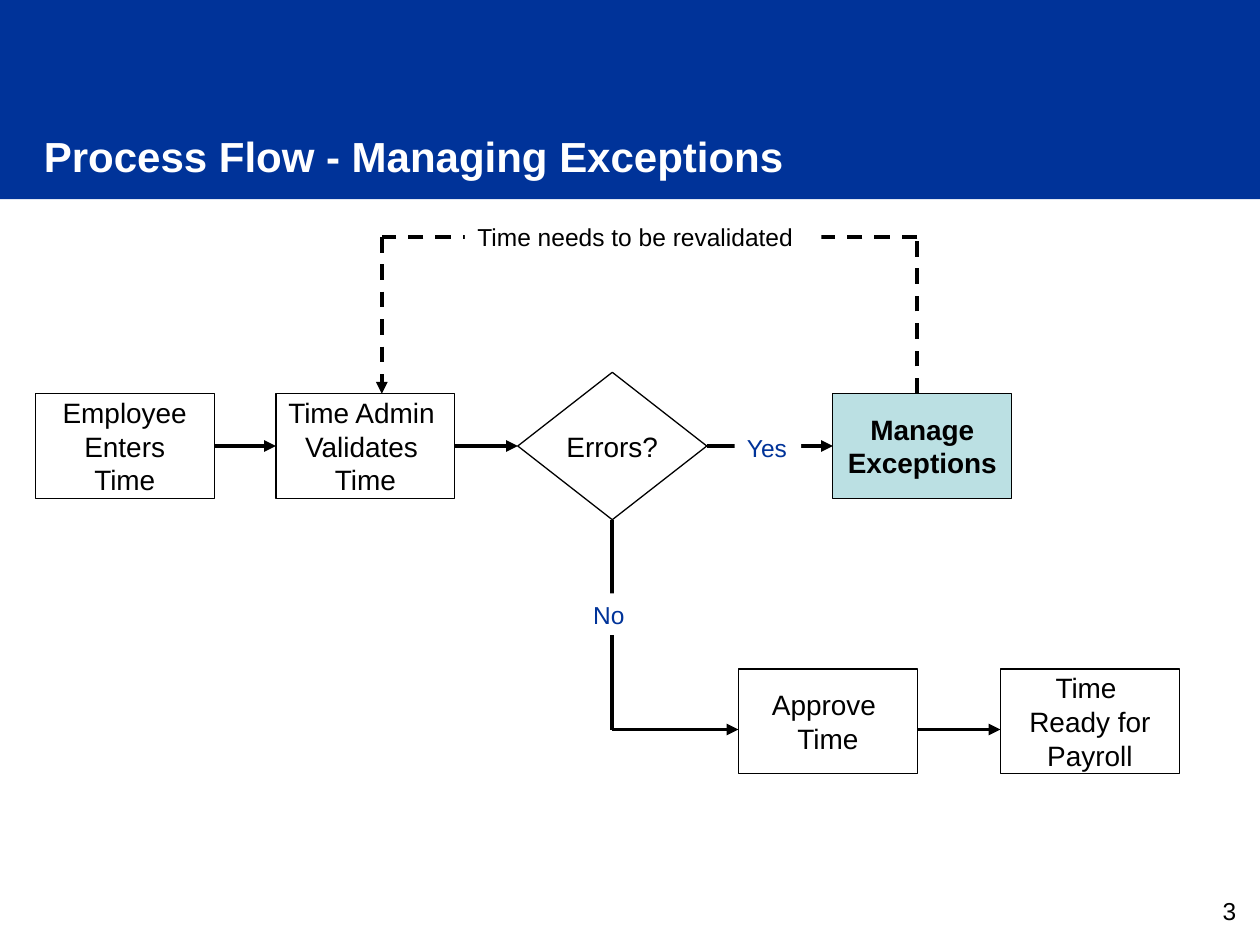
from lxml import etree
from pptx import Presentation
from pptx import util as u
from pptx.dml.color import RGBColor
from pptx.enum import dml, shapes, text
from pptx.oxml.ns import qn

COLORS = {"blue": "003399", "white": "FFFFFF", "black": "000000", "teal": "BBE0E3"}
FONT = "Arial"
SLIDE_W, SLIDE_H = 10, 7.5
BAND_H = 1.58
STEP_W, STEP_H = 1.42, 0.83
DIAMOND_W, DIAMOND_H = 1.5, 1.17
LABEL_H = 0.33

# Left edges of the columns, and heights of the flow rows
COL = {"enter": 0.28, "validate": 2.19, "decide": 4.11,
       "approve": 5.86, "manage": 6.61, "ready": 7.94}
MAIN_Y, APPROVE_Y, APPROVE_MID, LOOP_Y = 3.54, 5.79, 5.725, 1.88
DECIDE_X = COL["decide"] + DIAMOND_W / 2
VALIDATE_X, MANAGE_X = 3.03, 7.28

TITLE = "Process Flow - Managing Exceptions"
PAGE_NUMBER = "3"

# column, row centre, lines, highlighted
STEPS = [
    ("enter", MAIN_Y, ["Employee", "Enters", "Time"], False),
    ("validate", MAIN_Y, ["Time Admin ", "Validates ", "Time"], False),
    ("manage", MAIN_Y, ["Manage", "Exceptions"], True),
    ("approve", APPROVE_MID, ["Approve ", "Time"], False),
    ("ready", APPROVE_MID, ["Time ", "Ready for", "Payroll"], False),
]

MAIN_TOP = MAIN_Y - STEP_H / 2
# points along the path, dashed; the last segment may carry an arrowhead
FLOWS = [
    ([(COL["enter"] + STEP_W, MAIN_Y), (COL["validate"], MAIN_Y)], False),
    ([(COL["validate"] + STEP_W, MAIN_Y), (COL["decide"], MAIN_Y)], False),
    ([(COL["decide"] + DIAMOND_W, MAIN_Y), (COL["manage"], MAIN_Y)], False),
    ([(DECIDE_X, MAIN_Y + DIAMOND_H / 2), (DECIDE_X, APPROVE_Y),
      (COL["approve"], APPROVE_Y)], False),
    ([(COL["approve"] + STEP_W, APPROVE_Y), (COL["ready"], APPROVE_Y)], False),
    ([(MANAGE_X, MAIN_TOP), (MANAGE_X, LOOP_Y), (VALIDATE_X, LOOP_Y),
      (VALIDATE_X, MAIN_TOP)], True),
]

# wording, left, row centre, width, colour, wraps
LABELS = [
    ("Yes", 5.83, 3.555, 0.53, "blue", False),
    ("Time needs to be revalidated", 3.69, LOOP_Y, 2.83, "black", True),
    ("No", DECIDE_X - 0.25, 4.875, 0.5, "blue", True),
]


def rgb(name):
    return RGBColor.from_string(COLORS[name])


def write(shape, lines, size, color="black", bold=False, wrap=True,
          align=text.PP_ALIGN.LEFT, anchor=text.MSO_ANCHOR.TOP):
    frame = shape.text_frame
    frame.word_wrap = wrap
    frame.vertical_anchor = anchor
    for i, line in enumerate(lines):
        paragraph = frame.add_paragraph() if i else frame.paragraphs[0]
        paragraph.alignment = align
        run = paragraph.add_run()
        run.text = line
        run.font.name, run.font.size, run.font.bold = FONT, u.Pt(size), bold
        run.font.color.rgb = rgb(color)


def add_box(slide, kind, left, top, width, height, fill=None, outline=False):
    box = slide.shapes.add_shape(kind, *map(u.Inches, (left, top, width, height)))
    box.shadow.inherit = False
    if fill:
        box.fill.solid()
        box.fill.fore_color.rgb = rgb(fill)
    else:
        box.fill.background()
    if outline:
        box.line.color.rgb = rgb("black")
        box.line.width = u.Pt(0.75)
    else:
        box.line.fill.background()
    return box


def add_textbox(slide, *place):
    return slide.shapes.add_textbox(*map(u.Inches, place))


def add_flow(slide, points, dashed):
    """Join the points with straight lines, ending in an arrowhead."""
    for i, (start, end) in enumerate(zip(points, points[1:]), 1):
        line = slide.shapes.add_connector(
            shapes.MSO_CONNECTOR.STRAIGHT, *map(u.Inches, (*start, *end)))
        line.line.color.rgb = rgb("black")
        line.line.width = u.Pt(2.25)
        if dashed:
            line.line.dash_style = dml.MSO_LINE.DASH
        if i == len(points) - 1:
            etree.SubElement(line.line._get_or_add_ln(), qn("a:tailEnd"), type="triangle")
        etree.SubElement(line._element.spPr, qn("a:effectLst"))


def main():
    prs = Presentation()
    prs.slide_width, prs.slide_height = u.Inches(SLIDE_W), u.Inches(SLIDE_H)
    slide = prs.slides.add_slide(prs.slide_layouts[6])
    rect, diamond = shapes.MSO_SHAPE.RECTANGLE, shapes.MSO_SHAPE.DIAMOND
    centred = {"align": text.PP_ALIGN.CENTER, "anchor": text.MSO_ANCHOR.MIDDLE,
               "wrap": False}

    add_box(slide, rect, 0, 0, SLIDE_W, BAND_H, "blue")
    write(add_textbox(slide, 7.58, 7.06, 2.33, 0.52), [PAGE_NUMBER], 14,
          align=text.PP_ALIGN.RIGHT)
    write(add_textbox(slide, 0.25, 0.92, 9, 0.63), [TITLE], 24, "white", bold=True,
          anchor=text.MSO_ANCHOR.MIDDLE)

    for column, middle, lines, highlighted in STEPS:
        step = add_box(slide, rect, COL[column], middle - STEP_H / 2, STEP_W, STEP_H,
                       "teal" if highlighted else None, outline=True)
        write(step, lines, 16, bold=highlighted, **centred)
    decision = add_box(slide, diamond, COL["decide"], MAIN_Y - DIAMOND_H / 2,
                       DIAMOND_W, DIAMOND_H, outline=True)
    write(decision, ["Errors?"], 16, **centred)

    for points, dashed in FLOWS:
        add_flow(slide, points, dashed)

    for wording, left, middle, width, color, wraps in LABELS:
        label = add_box(slide, rect, left, middle - LABEL_H / 2, width, LABEL_H, "white")
        write(label, [wording], 14, color, wrap=wraps)

    prs.save("out.pptx")


if __name__ == "__main__":
    main()
